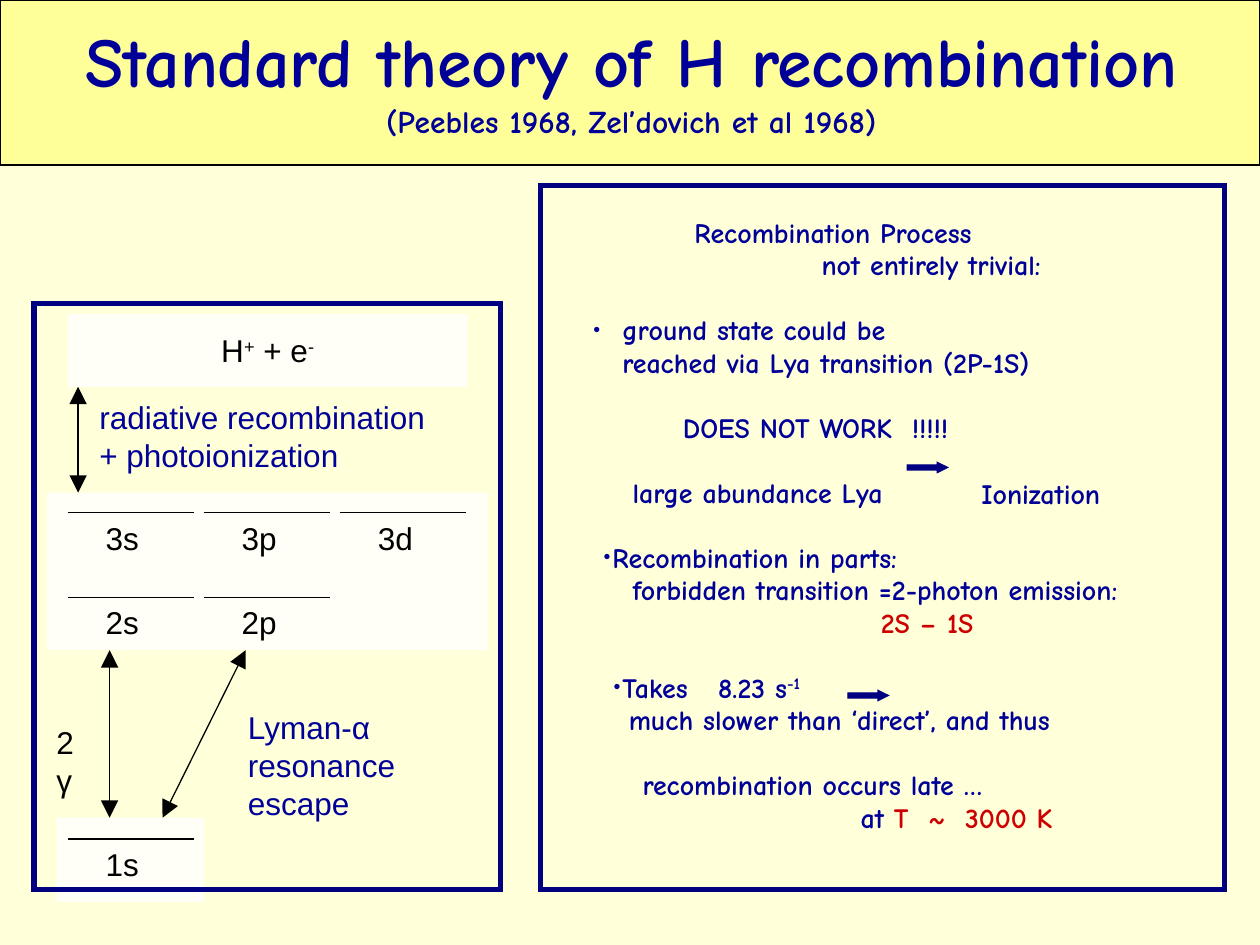
from lxml.etree import SubElement
from pptx import Presentation
from pptx.dml.color import RGBColor
from pptx.enum.shapes import MSO_CONNECTOR, MSO_SHAPE
from pptx.enum.text import MSO_ANCHOR, MSO_AUTO_SIZE, PP_ALIGN
from pptx.oxml.ns import qn
from pptx.util import Inches, Pt

COLORS = {"page": "FFFFD9", "banner": "FFFF99", "level": "FFFFF7", "ink": "000000",
          "text": "000099", "frame": "000080", "alert": "CC0000"}
DISPLAY, PLAIN = "Comic Neue", "Arial"

# Each line: runs as (text, style), text indent, bullet indent, tab stop, starts a block
PROCESS_LINES = [
    ([("Recombination Process", "")], 1.12, None, None, False),
    ([("not entirely trivial:", "")], 2.13, None, None, False),
    ([("ground state could be", "")], 0.55, 0.32, None, True),
    ([("reached via Lya transition (2P-1S)", "")], 0.55, None, None, False),
    ([("DOES NOT WORK  !!!!!", "")], 1.03, None, None, True),
    ([("large abundance Lya", "")], 0.63, None, None, True),
    ([("Recombination in parts:", "")], 0.47, 0.4, None, True),
    ([("forbidden transition =2-photon emission:", "")], 0.63, None, None, False),
    ([("2S – 1S", "alert")], 2.6, None, None, False),
    ([("Takes\t8.23 s", ""), ("-1", "super")], 0.55, 0.48, 1.31, True),
    ([("much slower than ‘direct’, and thus", "")], 0.6, None, None, False),
    ([("recombination occurs late …", "")], 0.71, None, None, True),
    ([("at ", ""), ("T  ~  3000 K", "alert")], 2.44, None, None, False),
]


def rgb(name):
    """Return the named palette colour."""
    return RGBColor.from_string(COLORS[name])


def style(font, face, size, color, bold=False):
    """Set the look of a font."""
    font.name, font.size, font.bold = face, Pt(size), bold
    font.color.rgb = rgb(color)


def raise_run(run):
    """Turn a run into superscript."""
    run.font._element.set("baseline", "30000")


def add_box(slide, box, fill=None, line=None, width=0.75, kind=MSO_SHAPE.RECTANGLE):
    """Add a preset shape with optional fill and outline."""
    shape = slide.shapes.add_shape(kind, *map(Inches, box))
    shape.shadow.inherit = False
    if fill:
        shape.fill.solid()
        shape.fill.fore_color.rgb = rgb(fill)
    else:
        shape.fill.background()
    if line:
        shape.line.color.rgb = rgb(line)
        shape.line.width = Pt(width)
        SubElement(shape.line._get_or_add_ln(), qn("a:miter"), lim="800000")
    else:
        shape.line.fill.background()
    return shape


def add_line(slide, start, end, arrows=False):
    """Add a thin line, with arrowheads at both ends on request."""
    line = slide.shapes.add_connector(MSO_CONNECTOR.STRAIGHT, *map(Inches, start + end))
    line.line.color.rgb = rgb("ink")
    line.line.width = Pt(0.75)
    if arrows:
        for end_tag in ("a:headEnd", "a:tailEnd"):
            SubElement(line.line._get_or_add_ln(), qn(end_tag),
                       type="triangle", w="lg", len="lg")
    SubElement(line._element.spPr, qn("a:effectLst"))


def add_label(slide, box, text, color="ink", face=PLAIN, size=18, bold=False):
    """Add a wrapping label, one paragraph for each line of text."""
    frame = slide.shapes.add_textbox(*map(Inches, box)).text_frame
    frame.word_wrap = True
    frame.text = text
    for paragraph in frame.paragraphs:
        style(paragraph.font, face, size, color, bold)


def add_heading(slide, box):
    """Fill the banner with the title and its references."""
    left, top, width, height = box
    add_box(slide, box, "banner", "ink")
    title = slide.shapes.title
    slide.shapes._spTree.append(title._element)
    title.left, title.top = Inches(left + 0.51), Inches(top)
    title.width, title.height = Inches(width - 1), Inches(height - 0.06)
    frame = title.text_frame
    frame.auto_size = MSO_AUTO_SIZE.NONE
    frame.vertical_anchor = MSO_ANCHOR.MIDDLE
    frame.text = "Standard theory of H recombination\v(Peebles 1968, Zel’dovich et al 1968)"
    paragraph = frame.paragraphs[0]
    paragraph.alignment = PP_ALIGN.CENTER
    for run, size in zip(paragraph.runs, (40, 18)):
        style(run.font, DISPLAY, size, "text", True)


def format_line(paragraph, indent, bullet, tab, starts_block):
    """Set the indents, bullet, tab stop and spacing of a process line."""
    properties = paragraph._p.get_or_add_pPr()
    properties.set("marL", str(Inches(indent)))
    properties.set("indent", str(Inches(bullet - indent) if bullet else 0))
    if bullet:
        SubElement(properties, qn("a:buSzPct"), val="70000")
        SubElement(properties, qn("a:buFont"), typeface=PLAIN)
        SubElement(properties, qn("a:buChar"), char="•")
    else:
        SubElement(properties, qn("a:buNone"))
    if tab:
        tabs = SubElement(properties, qn("a:tabLst"))
        SubElement(tabs, qn("a:tab"), pos=str(Inches(tab)), algn="l")
    paragraph.line_spacing = 0.8
    paragraph.space_before = Pt(21.8 if starts_block else 3.2)


def add_process(slide, box):
    """Fill the right panel with the steps of the recombination process."""
    left, top, width, height = box
    body = slide.placeholders[1]
    body.left, body.top = Inches(left), Inches(top + 0.24)
    body.width, body.height = Inches(width + 0.79), Inches(height + 0.08)
    frame = body.text_frame
    frame.auto_size = MSO_AUTO_SIZE.NONE
    frame.vertical_anchor = MSO_ANCHOR.TOP
    for index, (runs, *layout) in enumerate(PROCESS_LINES):
        paragraph = frame.add_paragraph() if index else frame.paragraphs[0]
        format_line(paragraph, *layout)
        for text, role in runs:
            run = paragraph.add_run()
            run.text = text
            style(run.font, DISPLAY, 16, "alert" if role == "alert" else "text", True)
            if role == "super":
                raise_run(run)
    frame.paragraphs[0].space_before = Pt(0)
    add_label(slide, (left + 3.4, top + 2.26, 1.4, 0.36), "Ionization", "text",
              DISPLAY, 16, True)
    add_box(slide, box, line="frame", width=3)
    for x, y in ((2.91, 2.2), (2.44, 4.01)):
        arrow = add_box(slide, (left + x, top + y, 0.32, 0.08), "frame", "frame",
                        kind=MSO_SHAPE.RIGHT_ARROW)
        arrow.adjustments[1] = 1.01


def add_ion(slide, box):
    """Add the ionized state at the top of the level diagram."""
    frame = add_box(slide, box, "level").text_frame
    frame.word_wrap = False
    frame.vertical_anchor = MSO_ANCHOR.MIDDLE
    paragraph = frame.paragraphs[0]
    paragraph.alignment = PP_ALIGN.CENTER
    for text in ("H", "+", " + e", "-"):
        run = paragraph.add_run()
        run.text = text
        style(run.font, PLAIN, 18, "ink")
        if text in "+-":
            raise_run(run)


def add_levels(slide, box):
    """Draw the hydrogen level diagram in the left panel."""
    left, top, width, height = box
    add_box(slide, (left + 0.18, top + 4.08, 1.17, 0.67), "level")
    add_box(slide, (left + 0.1, top + 1.5, 3.5, 1.25), "level")
    for y, names in ((4.25, ["1s"]), (2.33, ["2s", "2p"]), (1.66, ["3s", "3p", "3d"])):
        for column, name in enumerate(names):
            x = left + 0.27 + 1.08 * column
            add_line(slide, (x, top + y), (x + 1, top + y))
            add_label(slide, (x + 0.2, top + y, 0.6, 0.4), name)
    add_ion(slide, (left + 0.27, top + 0.08, 3.17, 0.58))
    for x1, y1, x2, y2 in ((0.6, 2.75, 0.6, 4.08), (1.68, 2.75, 1.02, 4.08),
                           (0.35, 0.66, 0.35, 1.5)):
        add_line(slide, (left + x1, top + y1), (left + x2, top + y2), arrows=True)
    add_label(slide, (left + 0.08, top + 3.28, 0.44, 0.7), "2γ")
    add_label(slide, (left + 1.6, top + 3.16, 1.6, 1), "Lyman-α\nresonance\nescape", "text")
    add_label(slide, (left + 0.42, top + 0.7, 3.1, 0.7),
              "radiative recombination\n+ photoionization", "text")
    add_box(slide, box, line="frame", width=3)


def main():
    """Build and save the slide."""
    deck = Presentation()
    deck.slide_width, deck.slide_height = Inches(10), Inches(7.5)
    slide = deck.slides.add_slide(deck.slide_layouts[1])
    slide.background.fill.solid()
    slide.background.fill.fore_color.rgb = rgb("page")
    add_heading(slide, (0, 0, 10, 1.31))
    add_levels(slide, (0.27, 2.41, 3.7, 4.65))
    add_process(slide, (4.29, 1.47, 5.43, 5.59))
    deck.save("out.pptx")


if __name__ == "__main__":
    main()
